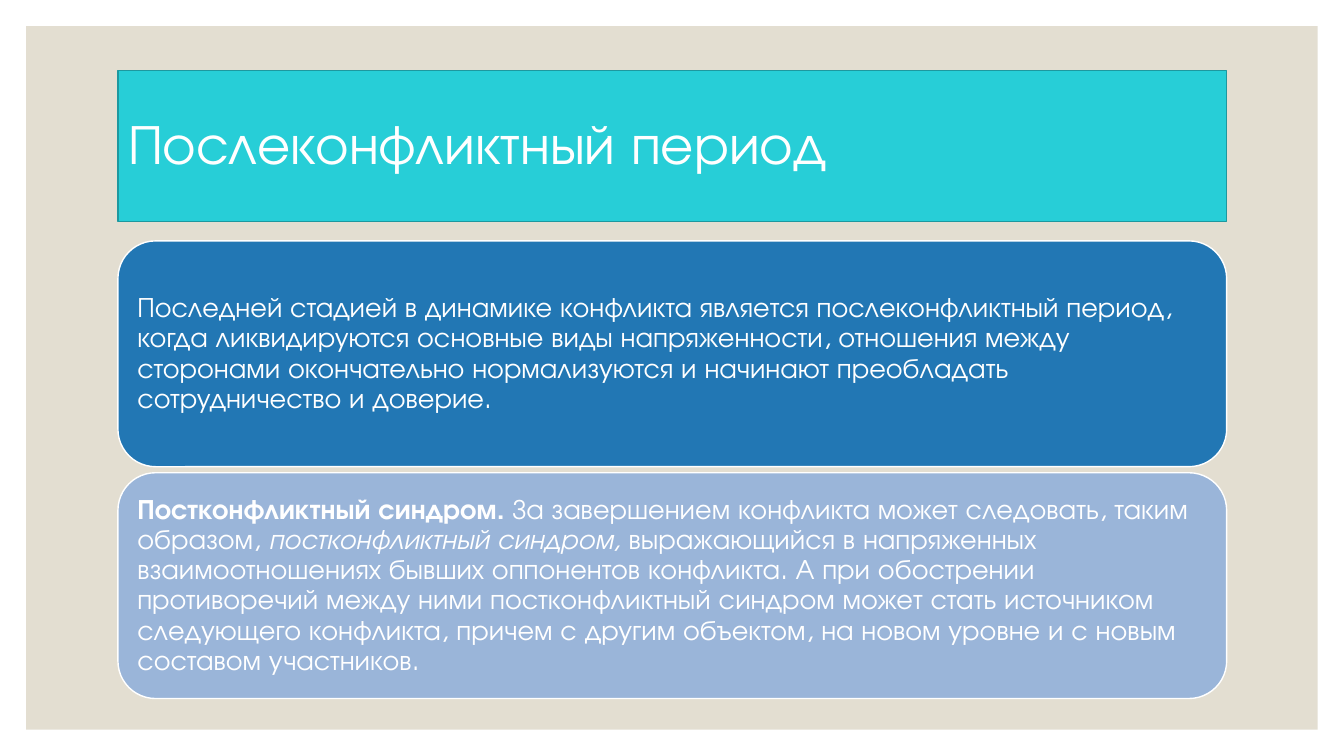
from dataclasses import dataclass

from pptx import Presentation
from pptx.dml.color import RGBColor
from pptx.enum.shapes import MSO_SHAPE
from pptx.enum.text import MSO_ANCHOR, MSO_AUTO_SIZE, PP_ALIGN
from pptx.util import Pt

RECTANGLE = MSO_SHAPE.RECTANGLE
ROUNDED_RECTANGLE = MSO_SHAPE.ROUNDED_RECTANGLE
MIDDLE = MSO_ANCHOR.MIDDLE
NO_AUTOFIT = MSO_AUTO_SIZE.NONE
LEFT = PP_ALIGN.LEFT
TITLE_ONLY = 5


@dataclass(frozen=True)
class Theme:
    font: str = "TeX Gyre Adventor"
    backdrop: RGBColor = RGBColor(0xE3, 0xDE, 0xD1)
    title_fill: RGBColor = RGBColor(0x27, 0xCE, 0xD7)
    title_line: RGBColor = RGBColor(0x1D, 0x98, 0x9F)
    card_fills: tuple = (RGBColor(0x22, 0x77, 0xB4), RGBColor(0x9A, 0xB5, 0xD9))
    white: RGBColor = RGBColor(0xFF, 0xFF, 0xFF)
    title_size: int = 40
    body_size: int = 20


THEME = Theme()

SLIDE_WIDTH, SLIDE_HEIGHT = 960, 540
FRAME_MARGIN = 18.72
CONTENT_LEFT, CONTENT_WIDTH = 84.24, 792
TITLE_TOP, TITLE_HEIGHT = 50.4, 108
CARD_TOP, CARD_HEIGHT, CARD_GAP = 172.08, 161.28, 4.32
CARD_INSET = 6

TITLE = "Послеконфликтный период"
CARDS = (
    (
        ("Последней стадией в динамике конфликта является послеконфликтный "
         "период, когда ликвидируются основные виды напряженности, отношения "
         "между сторонами окончательно нормализуются и начинают преобладать "
         "сотрудничество и доверие.", False, False),
    ),
    (
        ("Постконфликтный синдром. ", True, False),
        ("За завершением конфликта может следовать, таким образом, ", False, False),
        ("постконфликтный синдром, ", False, True),
        ("выражающийся в напряженных взаимоотношениях бывших оппонентов "
         "конфликта. А при обострении противоречий между ними "
         "постконфликтный синдром может стать источником следующего "
         "конфликта, причем с другим объектом, на новом уровне и с новым "
         "составом участников.", False, False),
    ),
)


def paint(shape, fill, line=None):
    shape.fill.solid()
    shape.fill.fore_color.rgb = fill
    if line is None:
        shape.line.fill.background()
    else:
        shape.line.color.rgb = line
        shape.line.width = Pt(1)


def add_panel(slide, kind, left, top, width, height, fill, line=None):
    shape = slide.shapes.add_shape(kind, Pt(left), Pt(top), Pt(width), Pt(height))
    shape.shadow.inherit = False
    paint(shape, fill, line)
    return shape


def write_text(shape, pieces, size):
    frame = shape.text_frame
    frame.word_wrap = True
    frame.auto_size = NO_AUTOFIT
    frame.vertical_anchor = MIDDLE
    paragraph = frame.paragraphs[0]
    paragraph.alignment = LEFT
    paragraph.line_spacing = 0.9
    for text, bold, italic in pieces:
        run = paragraph.add_run()
        run.text = text
        run.font.name = THEME.font
        run.font.size = Pt(size)
        run.font.color.rgb = THEME.white
        run.font.bold = bold
        run.font.italic = italic


def add_backdrop(slide):
    backdrop = add_panel(slide, RECTANGLE, FRAME_MARGIN, FRAME_MARGIN,
                         SLIDE_WIDTH - 2 * FRAME_MARGIN,
                         SLIDE_HEIGHT - 2 * FRAME_MARGIN, THEME.backdrop)
    slide.shapes.title.element.addprevious(backdrop.element)


def format_title(slide):
    title = slide.shapes.title
    title.left, title.top = Pt(CONTENT_LEFT), Pt(TITLE_TOP)
    title.width, title.height = Pt(CONTENT_WIDTH), Pt(TITLE_HEIGHT)
    paint(title, THEME.title_fill, THEME.title_line)
    write_text(title, [(TITLE, False, False)], THEME.title_size)


def add_card(slide, index, pieces, fill):
    top = CARD_TOP + index * (CARD_HEIGHT + CARD_GAP)
    card = add_panel(slide, ROUNDED_RECTANGLE, CONTENT_LEFT, top,
                     CONTENT_WIDTH, CARD_HEIGHT, fill, THEME.white)
    frame = card.text_frame
    frame.margin_left = frame.margin_right = Pt(CARD_INSET)
    frame.margin_top = frame.margin_bottom = Pt(CARD_INSET)
    write_text(card, pieces, THEME.body_size)


def main():
    presentation = Presentation()
    presentation.slide_width = Pt(SLIDE_WIDTH)
    presentation.slide_height = Pt(SLIDE_HEIGHT)
    slide = presentation.slides.add_slide(presentation.slide_layouts[TITLE_ONLY])
    add_backdrop(slide)
    format_title(slide)
    for index, (pieces, fill) in enumerate(zip(CARDS, THEME.card_fills)):
        add_card(slide, index, pieces, fill)
    presentation.save("out.pptx")


if __name__ == "__main__":
    main()
